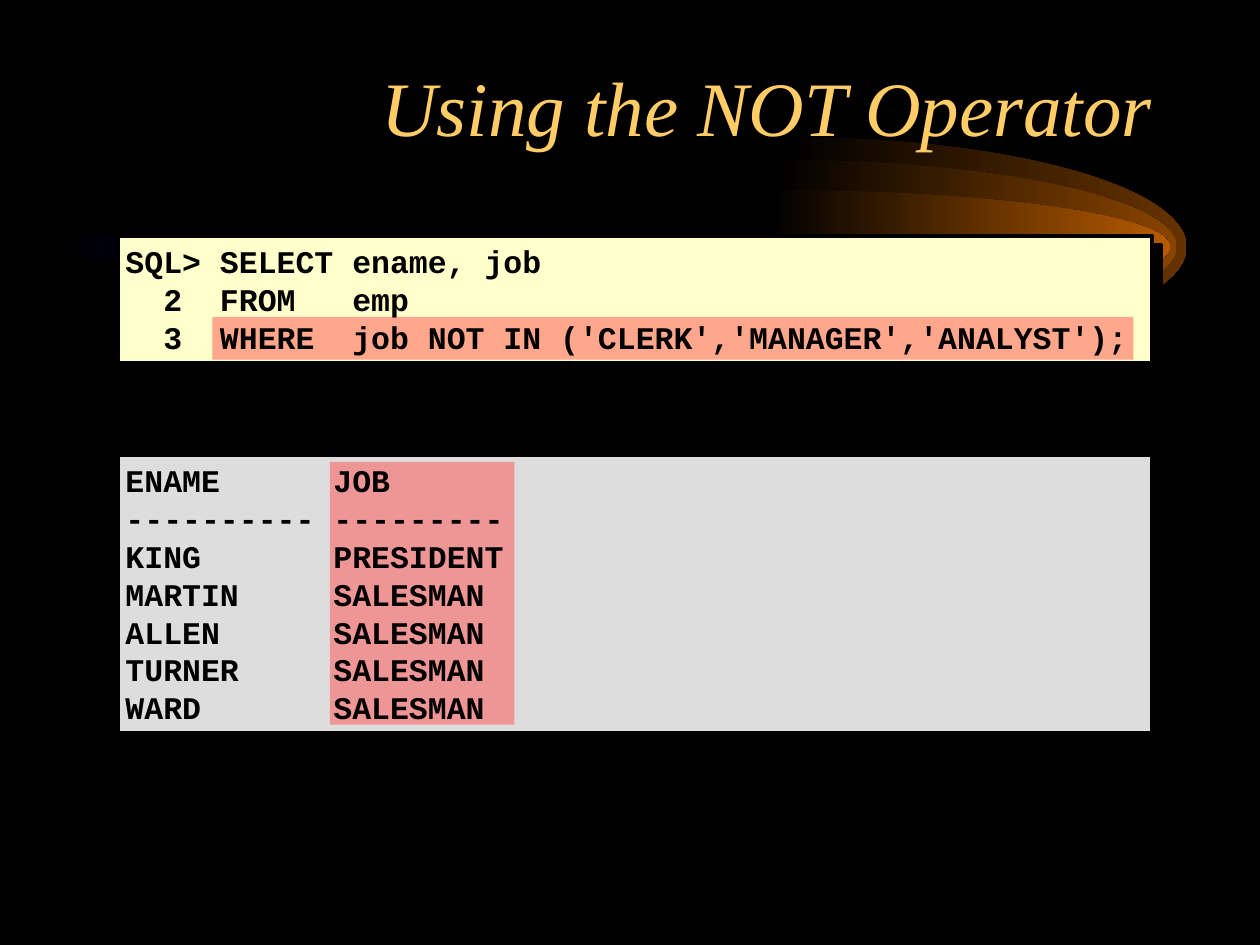
import lxml.etree
import pptx
import pptx.dml.color
import pptx.enum.shapes
import pptx.enum.text
import pptx.oxml.ns
import pptx.util

Cm = pptx.util.Cm
Pt = pptx.util.Pt
qn = pptx.oxml.ns.qn
shapes = pptx.enum.shapes.MSO_SHAPE


def color(code):
    return pptx.dml.color.RGBColor.from_string(code)


def shade(shape, stops):
    shape.shadow.inherit = False
    shape.line.fill.background()
    shape.fill.gradient()
    shape.fill.gradient_angle = 0
    stop_list = shape._element.spPr.find(".//" + qn("a:gsLst"))
    for stop in list(stop_list):
        stop_list.remove(stop)
    for percent, code in stops:
        stop = lxml.etree.SubElement(stop_list, qn("a:gs"), pos=str(percent * 1000))
        lxml.etree.SubElement(stop, qn("a:srgbClr"), val=code)


deck = pptx.Presentation()
deck.slide_width = Cm(25.4)
deck.slide_height = Cm(19.05)
page = deck.slides.add_slide(deck.slide_layouts[6])
page.background.fill.solid()
page.background.fill.fore_color.rgb = color("000000")

middle = 4.98
reach = 8.07
bend = 0.55
for left, radius, glow in [
    (15.85, 2.22, "663300"),
    (15.65, 1.76, "894400"),
    (15.52, 1.15, "B75B00"),
]:
    builder = page.shapes.build_freeform(Cm(left), Cm(middle - radius))
    builder.add_line_segments([
        (Cm(left + reach), Cm(middle)),
        (Cm(left), Cm(middle + radius)),
        (Cm(left), Cm(middle)),
    ], close=True)
    swoosh = builder.convert_to_shape()
    curves = [
        [(bend * reach, 0), (reach, radius * (1 - bend)), (reach, radius)],
        [(reach, radius * (1 + bend)), (bend * reach, 2 * radius), (0, 2 * radius)],
    ]
    sides = swoosh._element.spPr.findall(".//" + qn("a:lnTo"))
    for side, curve in zip(sides, curves):
        bezier = lxml.etree.Element(qn("a:cubicBezTo"))
        for x, y in curve:
            lxml.etree.SubElement(bezier, qn("a:pt"), x=str(Cm(x)), y=str(Cm(y)))
        side.getparent().replace(side, bezier)
    shade(swoosh, [(0, "000000"), (100, glow)])

beam = page.shapes.add_shape(shapes.ROUNDED_RECTANGLE, Cm(1.27), Cm(4.75), Cm(22), Cm(0.46))
beam.adjustments[0] = 0.5
shade(beam, [(0, "000000"), (20, "000040"), (50, "400040"),
             (75, "8F0040"), (90, "F27300"), (100, "FFBF00")])

for top, width, height, code in [(4.76, 20.85, 2.55, "FFFFCC"), (9.17, 20.83, 5.6, "DDDDDD")]:
    panel = page.shapes.add_shape(shapes.RECTANGLE, Cm(2.38), Cm(top), Cm(width), Cm(height))
    panel.fill.solid()
    panel.fill.fore_color.rgb = color(code)
    panel.line.color.rgb = color("000000")
    panel.line.width = Pt(2)
    panel.shadow.inherit = False
    effects = panel._element.spPr.find(qn("a:effectLst"))
    shadow = lxml.etree.SubElement(effects, qn("a:outerShdw"), dist=str(Pt(7.1)),
                                   dir="2700000", algn="ctr", rotWithShape="0")
    lxml.etree.SubElement(shadow, qn("a:srgbClr"), val="000000")

title = page.shapes.add_textbox(Cm(1.9), Cm(1.07), Cm(21.59), Cm(3.17))
title.text_frame.word_wrap = True
para = title.text_frame.paragraphs[0]
para.text = "Using the NOT Operator"
para.alignment = pptx.enum.text.PP_ALIGN.RIGHT
para.font.name = "Times New Roman"
para.font.size = Pt(44)
para.font.italic = True
para.font.color.rgb = color("FFCC66")

for left, top, width, height in [(4.28, 6.39, 18.57, 0.86), (6.65, 9.31, 3.72, 5.3)]:
    marker = page.shapes.add_shape(shapes.RECTANGLE, Cm(left), Cm(top), Cm(width), Cm(height))
    marker.shadow.inherit = False
    marker.line.fill.background()
    marker.fill.solid()
    marker.fill.fore_color.rgb = color("FF5050")
    tint = marker._element.spPr.find(".//" + qn("a:srgbClr"))
    lxml.etree.SubElement(tint, qn("a:alpha"), val="50000")

query = """SQL> SELECT ename, job
  2  FROM   emp
  3  WHERE  job NOT IN ('CLERK','MANAGER','ANALYST');"""
result = """ENAME      JOB
---------- ---------
KING       PRESIDENT
MARTIN     SALESMAN
ALLEN      SALESMAN
TURNER     SALESMAN
WARD       SALESMAN"""

for top, height, listing in [(4.72, 2.62, query), (9.14, 5.66, result)]:
    box = page.shapes.add_textbox(Cm(2.28), Cm(top), Cm(20.93), Cm(height))
    frame = box.text_frame
    frame.word_wrap = True
    frame.vertical_anchor = pptx.enum.text.MSO_ANCHOR.MIDDLE
    frame.text = listing
    for para in frame.paragraphs:
        para.line_spacing = Pt(21.6)
        para.font.name = "Courier New"
        para.font.size = Pt(18)
        para.font.bold = True
        para.font.color.rgb = color("000000")

deck.save("out.pptx")
